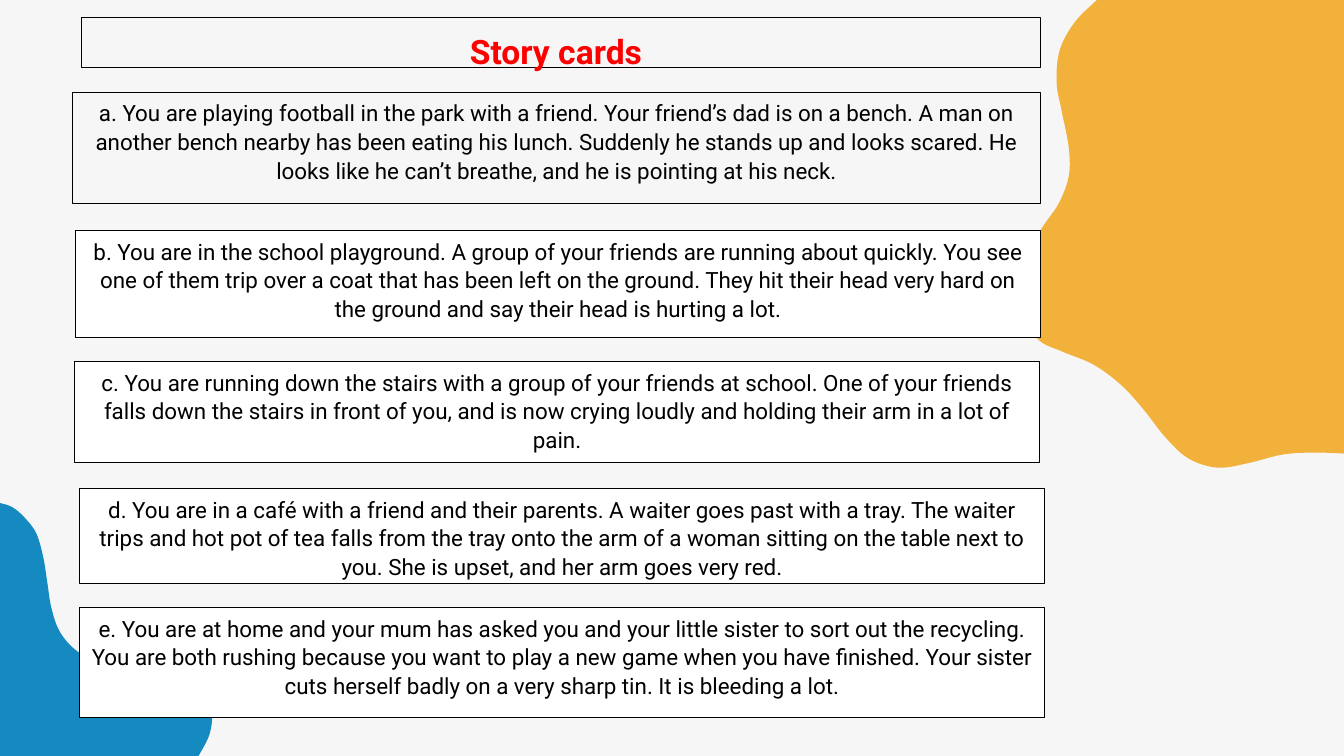
import pptx
import pptx.dml.color
import pptx.enum.shapes
import pptx.enum.text
import pptx.util
from pptx.util import Inches

COLOURS = {
    "background": "F6F6F6",
    "yellow": "F1B13B",
    "blue": "158AC0",
    "card": "FFFFFF",
    "ink": "000000",
    "title": "FF0000",
}
FONT = "Roboto"

YELLOW_EDGE = [
    (10.88, 0), (10.66, 0.22), (10.51, 0.5), (10.48, 0.82), (10.53, 1.1),
    (10.6, 1.46), (10.6, 1.75), (10.5, 2.02), (10.33, 2.27), (10.17, 2.57),
    (10.11, 2.89), (10.16, 3.16), (10.31, 3.38), (10.54, 3.49), (10.85, 3.62),
    (11.12, 3.82), (11.34, 4.06), (11.56, 4.34), (11.79, 4.55), (12.08, 4.64),
    (12.4, 4.59), (12.72, 4.51), (13.03, 4.49), (13.33, 4.5),
]
BLUE_EDGE = [
    (1.97, 7.5), (2.08, 7.28), (2.1, 7.04), (2, 6.84), (1.82, 6.7),
    (1.54, 6.63), (1.22, 6.6), (0.94, 6.55), (0.74, 6.44), (0.59, 6.26),
    (0.51, 6.03), (0.47, 5.78), (0.43, 5.53), (0.36, 5.29), (0.24, 5.13),
    (0.12, 5.03), (0, 4.99),
]

# Left, top, width, height, fill, line width, text
CARDS = [
    (0.72, 0.92, 9.6, 1.1, None, 0.5,
     "a. You are playing football in the park with a friend. Your friend’s dad is on a bench. "
     "A man on another bench nearby has been eating his lunch. Suddenly he stands up and looks "
     "scared. He looks like he can’t breathe, and he is pointing at his neck."),
    (0.75, 2.29, 9.57, 1.06, "card", 0.75,
     "b. You are in the school playground. A group of your friends are running about quickly. "
     "You see one of them trip over a coat that has been left on the ground. They hit their "
     "head very hard on the ground and say their head is hurting a lot."),
    (0.74, 3.59, 9.57, 1, "card", 0.75,
     "c. You are running down the stairs with a group of your friends at school. One of your "
     "friends falls down the stairs in front of you, and is now crying loudly and holding "
     "their arm in a lot of pain."),
    (0.79, 4.85, 9.57, 0.94, "card", 0.75,
     "d. You are in a café with a friend and their parents. A waiter goes past with a tray. "
     "The waiter trips and hot pot of tea falls from the tray onto the arm of a woman sitting "
     "on the table next to you. She is upset, and her arm goes very red."),
    (0.79, 6.03, 9.57, 1.09, "card", 0.75,
     "e. You are at home and your mum has asked you and your little sister to sort out the "
     "recycling. You are both rushing because you want to play a new game when you have "
     "finished. Your sister cuts herself badly on a very sharp tin. It is bleeding a lot."),
]


def rgb(name):
    return pptx.dml.color.RGBColor.from_string(COLOURS[name])


def smooth_curve(knots, steps=6):
    """Return points on a Catmull-Rom curve through the knots."""
    padded = [knots[0], *knots, knots[-1]]
    points = [knots[0]]
    for a, b, c, d in zip(padded, padded[1:], padded[2:], padded[3:]):
        for step in range(1, steps + 1):
            t = step / steps
            points.append(tuple(
                q + t * (r - p) / 2
                + t ** 2 * (2 * p - 5 * q + 4 * r - s) / 2
                + t ** 3 * (3 * q - p - 3 * r + s) / 2
                for p, q, r, s in zip(a, b, c, d)))
    return points


def add_blob(slide, edge, corner, colour):
    """Fill the area between a curved edge and a corner of the slide."""
    outline = [(Inches(x), Inches(y)) for x, y in smooth_curve(edge) + [corner]]
    builder = slide.shapes.build_freeform(*outline[0])
    builder.add_line_segments(outline[1:], close=True)
    blob = builder.convert_to_shape()
    blob.shadow.inherit = False
    blob.fill.solid()
    blob.fill.fore_color.rgb = rgb(colour)
    blob.line.fill.background()


def add_card(slide, left, top, width, height, fill, line_width, text,
             size=16, colour="ink", bold=False):
    card = slide.shapes.add_shape(
        pptx.enum.shapes.MSO_SHAPE.RECTANGLE,
        Inches(left), Inches(top), Inches(width), Inches(height))
    card.shadow.inherit = False
    if fill:
        card.fill.solid()
        card.fill.fore_color.rgb = rgb(fill)
    else:
        card.fill.background()
    card.line.color.rgb = rgb("ink")
    card.line.width = pptx.util.Pt(line_width)

    frame = card.text_frame
    frame.word_wrap = True
    frame.vertical_anchor = pptx.enum.text.MSO_ANCHOR.TOP
    paragraph = frame.paragraphs[0]
    paragraph.text = text
    paragraph.alignment = pptx.enum.text.PP_ALIGN.CENTER
    paragraph.line_spacing = 1.07
    paragraph.space_after = pptx.util.Pt(8)
    paragraph.font.name = FONT
    paragraph.font.size = pptx.util.Pt(size)
    paragraph.font.bold = bold
    paragraph.font.color.rgb = rgb(colour)
    return card


def main():
    deck = pptx.Presentation()
    deck.slide_width, deck.slide_height = Inches(13.33), Inches(7.5)
    slide = deck.slides.add_slide(deck.slide_layouts[6])
    slide.background.fill.solid()
    slide.background.fill.fore_color.rgb = rgb("background")

    add_blob(slide, YELLOW_EDGE, (13.33, 0), "yellow")
    add_blob(slide, BLUE_EDGE, (0, 7.5), "blue")
    for card in CARDS:
        add_card(slide, *card)
    title = add_card(slide, 0.81, 0.17, 9.51, 0.5, None, 0.5, "Story cards",
                     size=24, colour="title", bold=True)
    title.text_frame.margin_top = Inches(0.11)
    title.text_frame.margin_right = Inches(0.2)

    deck.save("out.pptx")


if __name__ == "__main__":
    main()
